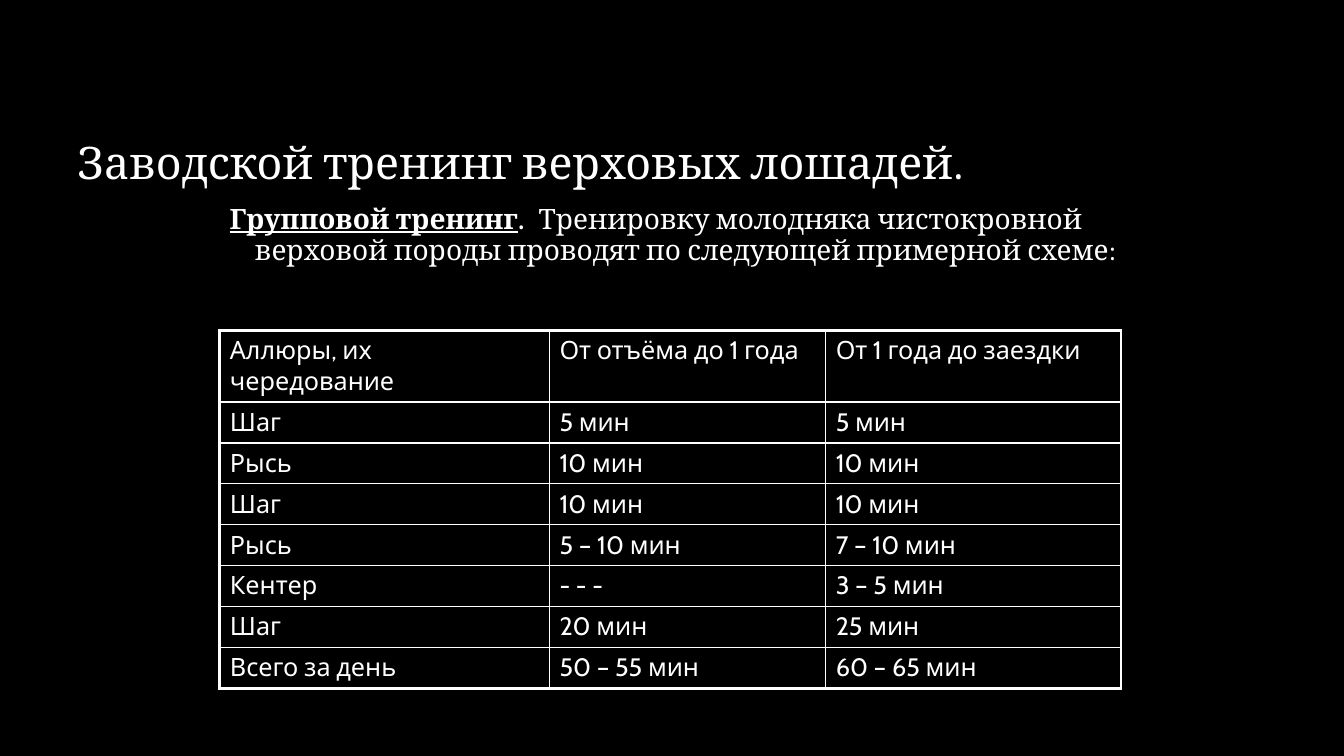
from lxml import etree
from pptx import Presentation
from pptx.dml.color import RGBColor
from pptx.enum.text import MSO_ANCHOR
from pptx.oxml.ns import qn
from pptx.util import Pt

BOTTOM = MSO_ANCHOR.BOTTOM
TOP = MSO_ANCHOR.TOP
COLORS = {"back": "000000", "ink": "FFFFFF"}
SERIF, SANS = "Cambria", "Cabin"
THIN, THICK = 1, 2.25


def add_text(box, anchor, spacing, runs):
    """Fill a text box with one paragraph of (text, size, strong) runs."""
    frame = box.text_frame
    frame.word_wrap = True
    frame.vertical_anchor = anchor
    para = frame.paragraphs[0]
    para.line_spacing = spacing
    for text, size, strong in runs:
        run = para.add_run()
        run.text = text
        style(run.font, SERIF, size)
        run.font.bold = strong
        run.font.underline = strong
    return para


def style(font, name, size):
    font.name = name
    font.size = Pt(size)
    font.color.rgb = RGBColor.from_string(COLORS["ink"])


prs = Presentation()
prs.slide_width, prs.slide_height = Pt(960), Pt(540)
slide = prs.slides.add_slide(prs.slide_layouts[6])
back = slide.background.fill
back.solid()
back.fore_color.rgb = RGBColor.from_string(COLORS["back"])

# Heading and introduction
title = slide.shapes.add_textbox(Pt(48), Pt(30), Pt(864), Pt(108))
add_text(title, BOTTOM, 0.8, [("Заводской тренинг верховых лошадей.", 32, False)])

intro = slide.shapes.add_textbox(Pt(157), Pt(139.5), Pt(648), Pt(324))
para = add_text(intro, TOP, 0.9, [
    ("Групповой тренинг", 20, True),
    (".  ", 24, False),
    ("Тренировку молодняка чистокровной верховой породы проводят "
     "по следующей примерной схеме:", 20, False),
])
props = para._p.get_or_add_pPr()
props.set("marL", str(Pt(18)))
props.set("indent", str(Pt(-18)))

# Training schedule
ROWS = [
    ("Аллюры, их чередование", "От отъёма до 1 года", "От 1 года до заездки"),
    ("Шаг", "5 мин", "5 мин"),
    ("Рысь", "10 мин", "10 мин"),
    ("Шаг", "10 мин", "10 мин"),
    ("Рысь", "5 – 10 мин", "7 – 10 мин"),
    ("Кентер", "- - -", "3 – 5 мин"),
    ("Шаг", "20 мин", "25 мин"),
    ("Всего за день", "50 – 55 мин", "60 – 65 мин"),
]
WIDTHS = [235.5, 197.3, 211]
HEAD, STEP = 51.2, 29.2
last_row, last_col = len(ROWS) - 1, len(WIDTHS) - 1

table = slide.shapes.add_table(
    len(ROWS), len(WIDTHS), Pt(157), Pt(236),
    Pt(sum(WIDTHS)), Pt(HEAD + STEP * last_row)).table
table.first_row = False
table.horz_banding = False
for col, width in zip(table.columns, WIDTHS):
    col.width = Pt(width)
for r, texts in enumerate(ROWS):
    table.rows[r].height = Pt(STEP if r else HEAD)
    for c, text in enumerate(texts):
        cell = table.cell(r, c)
        cell.text_frame.text = text
        style(cell.text_frame.paragraphs[0].runs[0].font, SANS, 18)
        outer = {"lnL": c == 0, "lnR": c == last_col,
                 "lnT": r == 0, "lnB": r == last_row}
        tc_props = cell._tc.get_or_add_tcPr()
        for tag, thick in outer.items():
            line = etree.SubElement(tc_props, qn("a:" + tag))
            line.set("w", str(Pt(THICK if thick else THIN)))
            fill = etree.SubElement(line, qn("a:solidFill"))
            etree.SubElement(fill, qn("a:srgbClr")).set("val", COLORS["ink"])
        cell.fill.solid()
        cell.fill.fore_color.rgb = RGBColor.from_string(COLORS["back"])

prs.save("out.pptx")
